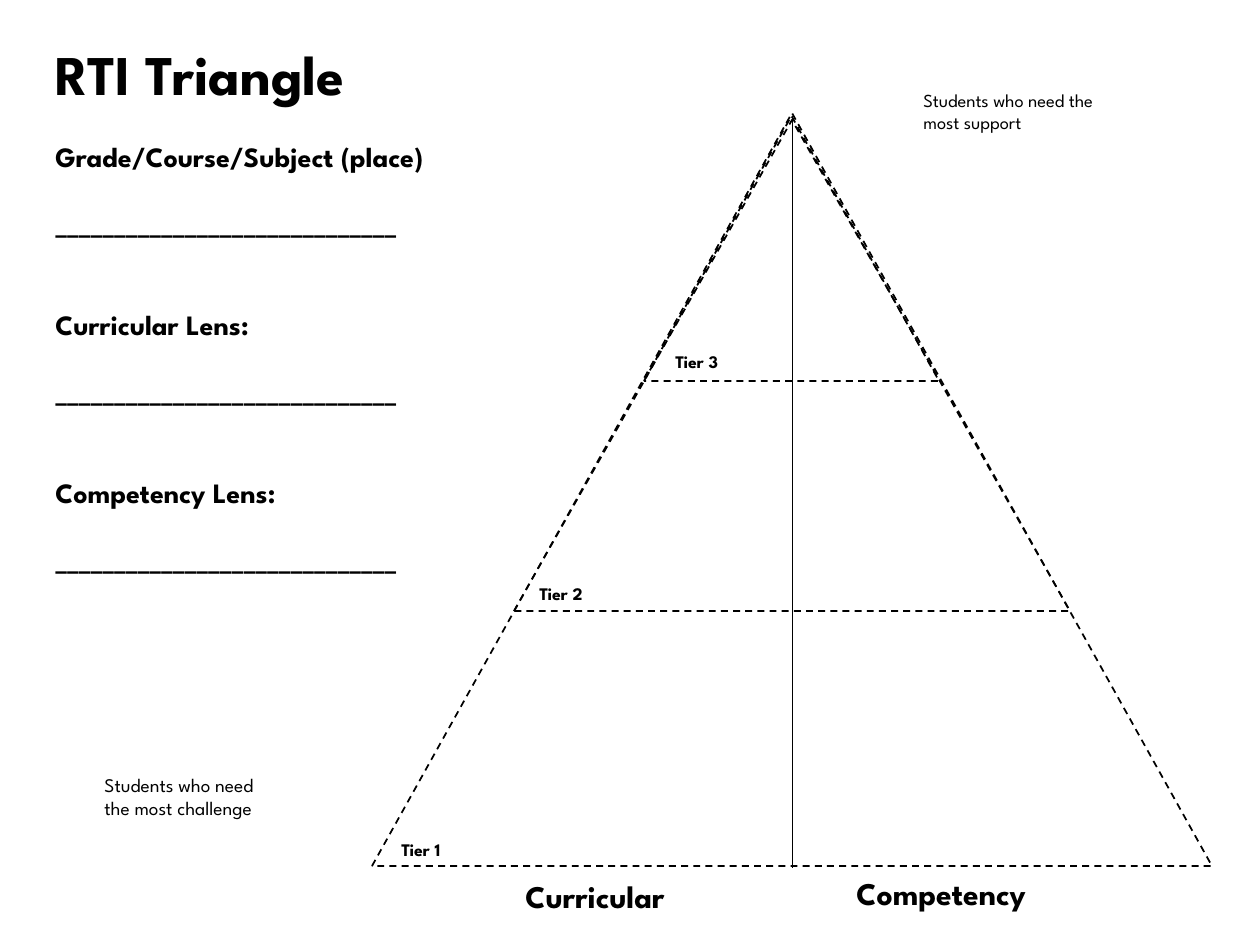
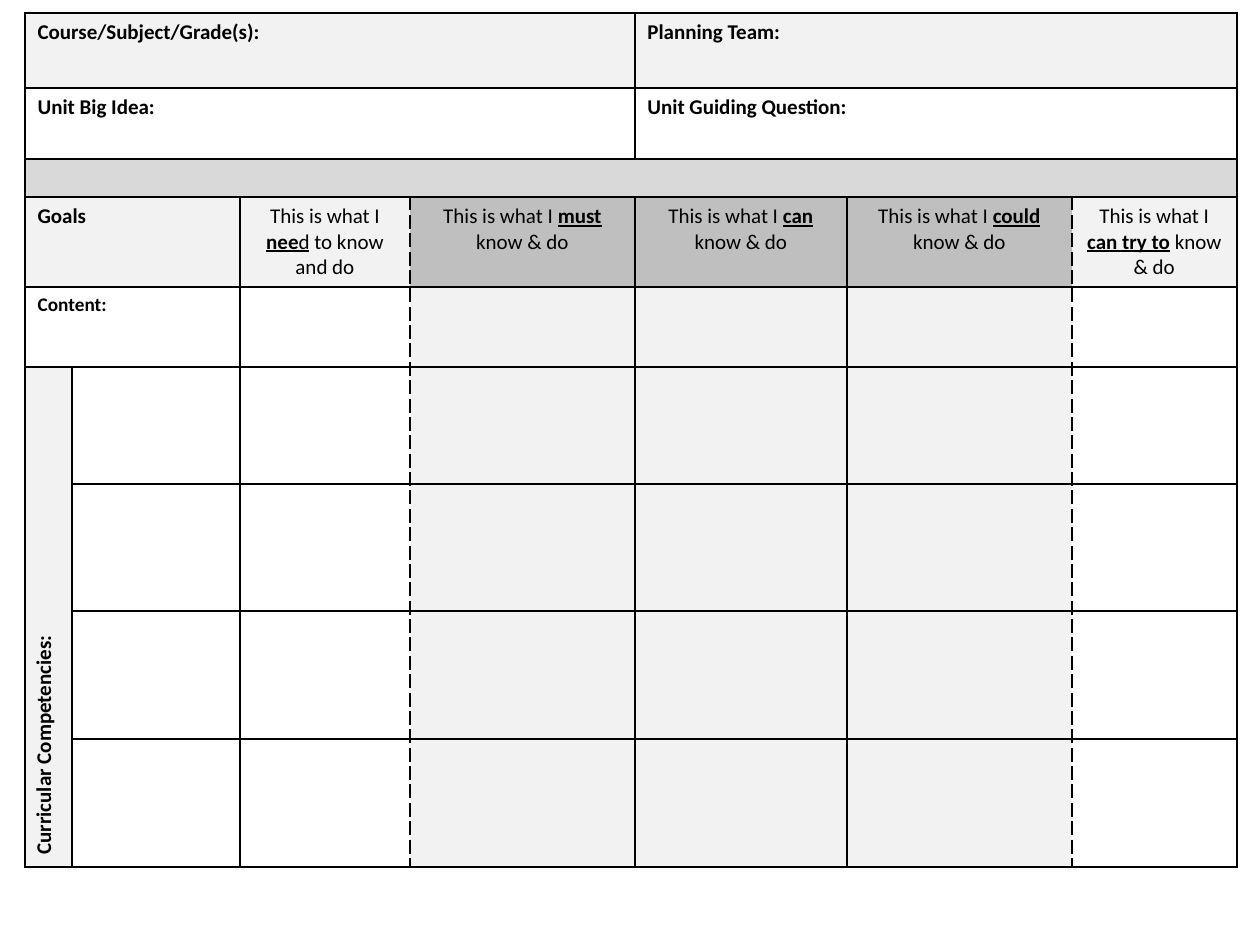
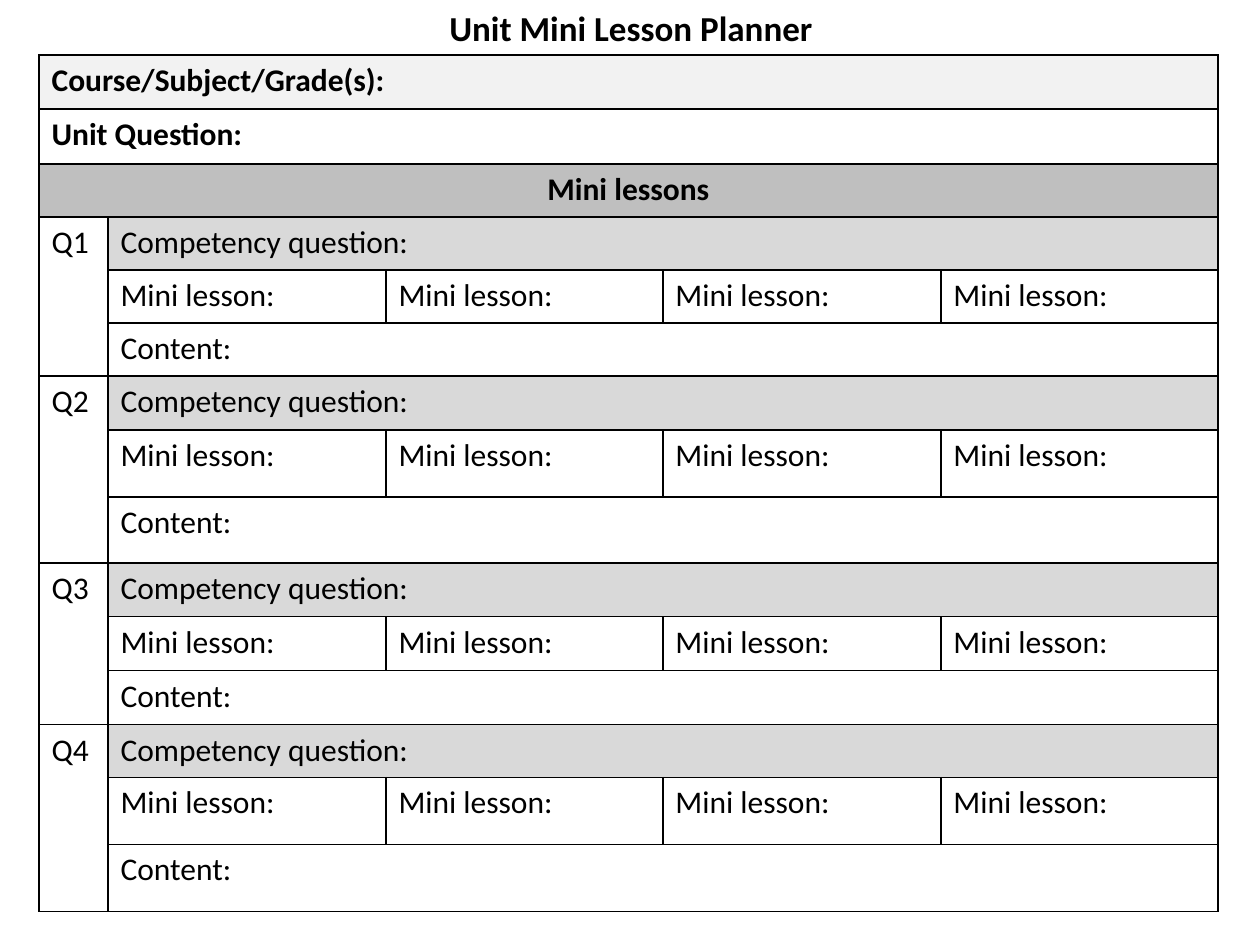
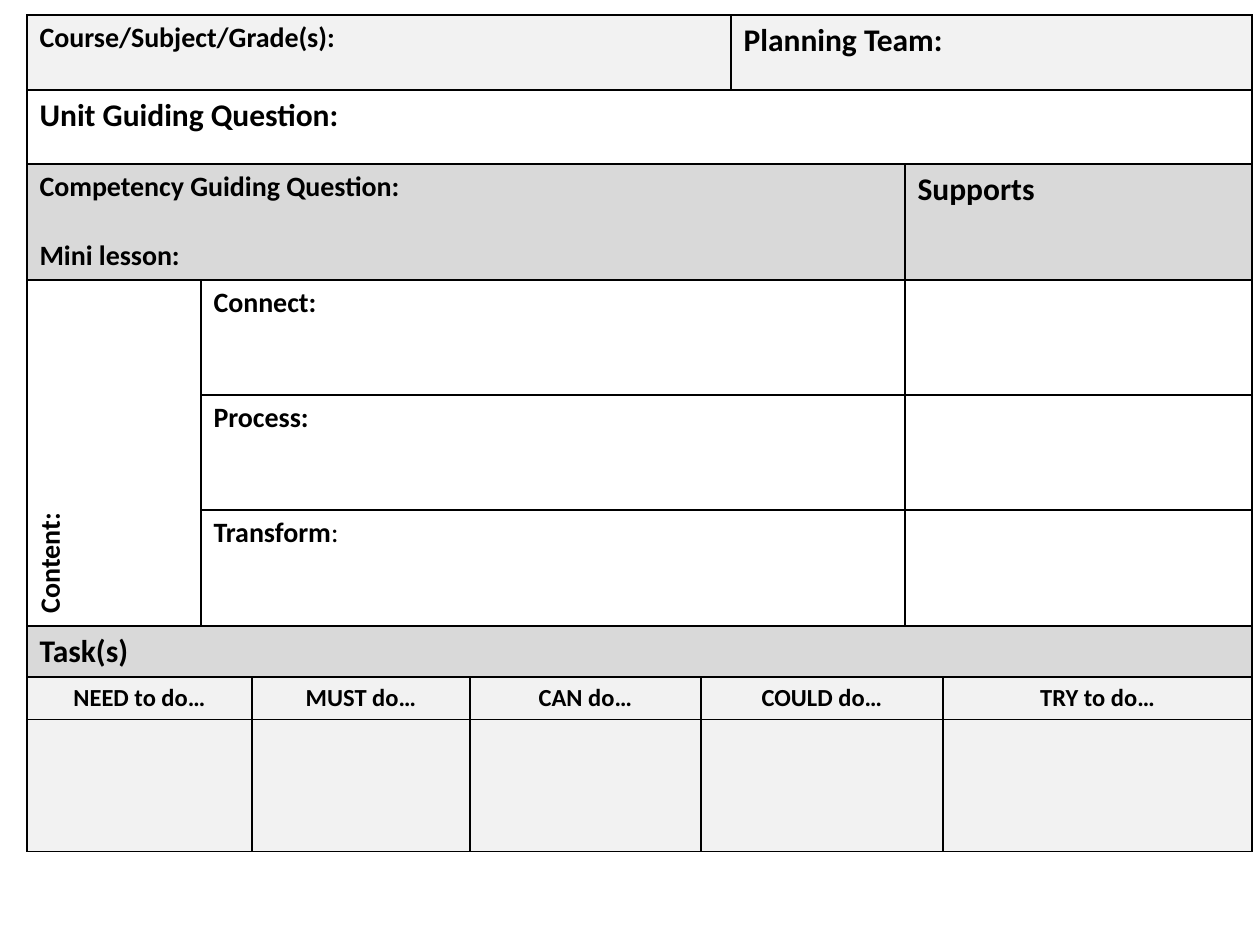
from lxml import etree
from pptx import Presentation
from pptx import util as u
from pptx.dml.color import RGBColor
from pptx.enum import dml, shapes, text
from pptx.oxml.ns import qn

PX = 914400 / 126
BLACK, WHITE = "000000", "FFFFFF"
PALE, LIGHT, MID = "F2F2F2", "D9D9D9", "BFBFBF"
SANS, HEAD = "Calibri", "League Spartan"
hue = RGBColor.from_string
MIDDLE = text.PP_ALIGN.CENTER


def write(frame, paras, size=12, bold=True, font=SANS, align=None, gaps=()):
    """Fill a frame; a paragraph is a string or a list of (text, marks), marks from b and u."""
    for i, para in enumerate(paras):
        p = frame.paragraphs[0] if i == 0 else frame.add_paragraph()
        p.alignment = align
        if gaps:
            p.space_before = u.Pt(gaps[i])
        for words, marks in [(para, "b" * bold)] if isinstance(para, str) else para:
            run = p.add_run()
            run.text = words
            run.font.name, run.font.size = font, u.Pt(size)
            run.font.bold, run.font.underline = "b" in marks, "u" in marks
            run.font.color.rgb = hue(BLACK)


def grid(slide, xs, ys, parts, dashed=(), top=0):
    """Draw a ruled table from its edges; parts are (row, col, rows, cols, fill, paras, format)."""
    frame = slide.shapes.add_table(
        len(ys) - 1, len(xs) - 1, *[round(n * PX) for n in (xs[0], ys[0], xs[-1] - xs[0], ys[-1] - ys[0])])
    tab = frame.table
    tab.first_row = tab.horz_banding = False
    for lines, edges, side in ((tab.columns, xs, "width"), (tab.rows, ys, "height")):
        for line, a, b in zip(lines, edges, edges[1:]):
            setattr(line, side, round((b - a) * PX))
    fills = {}
    for row, col, high, wide, fill, paras, form in parts:
        cell = tab.cell(row, col)
        if high * wide > 1:
            cell.merge(tab.cell(row + high - 1, col + wide - 1))
        fills.update({(r, c): fill for r in range(row, row + high) for c in range(col, col + wide)})
        write(cell.text_frame, paras, **form)
    for r in range(len(ys) - 1):
        for c in range(len(xs) - 1):
            cell = tab.cell(r, c)
            cell.fill.solid()
            cell.fill.fore_color.rgb = hue(fills.get((r, c), WHITE))
            if not cell.text_frame.text:
                cell.text_frame.paragraphs[0]._p.get_or_add_endParaRPr().set("sz", "1200")
            props = cell._tc.get_or_add_tcPr()
            for i, side in enumerate("LRTB"):
                line = etree.Element(qn("a:ln" + side), w="12700")
                ink = etree.SubElement(line, qn("a:solidFill"))
                etree.SubElement(ink, qn("a:srgbClr"), val=BLACK)
                edge = {"L": c, "R": c + 1}.get(side)
                dash = "lgDash" if edge in dashed and r >= top else "solid"
                etree.SubElement(line, qn("a:prstDash"), val=dash)
                props.insert(i, line)
    return tab


prs = Presentation()
prs.slide_width, prs.slide_height = u.Inches(10), u.Inches(7.5)
tri, goals, mini, plan = [prs.slides.add_slide(prs.slide_layouts[6]) for _ in range(4)]

# Slide 1: form fields and labels
RULE = "_" * 29
form = ["RTI Triangle", "Grade/Course/Subject (place)", RULE,
        "Curricular Lens:", RULE, "Competency Lens:", RULE]
box = tri.shapes.add_textbox(*[round(n * PX) for n in (43, 33, 616, 556)])
box.fill.solid()
box.fill.fore_color.rgb = hue(WHITE)
box.text_frame.word_wrap = True
write(box.text_frame, form, size=16, font=HEAD, gaps=(0, 19.2, 19.2, 38.4, 19.2, 38.4, 19.2))
box.text_frame.paragraphs[0].runs[0].font.size = u.Pt(32)

labels = [
    ("Tier 1", 389, 833, 78, 34, 10.1, True),
    ("Tier 2", 527, 577, 78, 34, 10.1, True),
    ("Tier 3", 663, 345, 78, 34, 10.1, True),
    ("Students who need the most support", 911, 83, 215, 57, 10.5, False),
    ("Students who need the most challenge", 92, 767, 184, 83, 11, False),
    ("Curricular", 513, 871, 184, 50, 18, True),
    ("Competency", 844, 868, 229, 50, 18, True),
]
for words, x, y, w, h, size, bold in labels:
    box = tri.shapes.add_textbox(*[round(n * PX) for n in (x, y, w, h)])
    box.text_frame.word_wrap = size < 18
    box.text_frame.auto_size = text.MSO_AUTO_SIZE.SHAPE_TO_FIT_TEXT
    write(box.text_frame, [words], size=size, bold=bold, font=HEAD)
    if words.startswith("Tier"):
        box.line.color.rgb = hue(WHITE)
        box.line.width = u.Pt(0.75)

# Nested triangles and the middle line
for spot in ((372, 113, 840, 753), (514, 120, 556, 491), (644, 116, 295, 265)):
    tier = tri.shapes.add_shape(shapes.MSO_SHAPE.ISOSCELES_TRIANGLE, *[round(n * PX) for n in spot])
    tier.shadow.inherit = False
    tier.fill.background()
    tier.line.color.rgb = hue(BLACK)
    tier.line.width = u.Pt(1)
    tier.line.dash_style = dml.MSO_LINE.DASH
split = tri.shapes.add_connector(
    shapes.MSO_CONNECTOR.STRAIGHT, *[round(n * PX) for n in (792, 116, 792, 868)])
split.line.color.rgb = hue(BLACK)
split.line.width = u.Pt(0.5)
etree.SubElement(split._element.spPr, qn("a:effectLst"))

# Slide 2: goals table
parts = [
    (0, 0, 1, 4, PALE, ["Course/Subject/Grade(s):"], {}),
    (0, 4, 1, 3, PALE, ["Planning Team:"], {}),
    (1, 0, 1, 4, WHITE, ["Unit Big Idea:"], {}),
    (1, 4, 1, 3, WHITE, ["Unit Guiding Question:"], {}),
    (2, 0, 1, 7, LIGHT, [], {}),
    (3, 0, 1, 2, PALE, ["Goals"], {}),
    (4, 0, 1, 2, WHITE, ["Content:"], {"size": 11}),
    (5, 0, 4, 1, PALE, ["Curricular Competencies:"], {}),
]
steps = [
    (PALE, [("nee", "bu"), ("d", "u"), (" to know and do", "")]),
    (MID, [("must ", "bu"), ("know & do", "")]),
    (MID, [("can", "bu"), (" know & do", "")]),
    (MID, [("could", "bu"), (" know & do", "")]),
    (PALE, [("can try to", "bu"), (" know & do", "")]),
]
for c, (fill, runs) in enumerate(steps, 2):
    parts.append((3, c, 1, 1, fill, [[("This is what I ", "")] + runs], {"align": MIDDLE}))
parts += [(r, c, 1, 1, PALE, [], {}) for r in range(4, 9) for c in (3, 4, 5)]
tab = grid(goals, (25, 72, 240, 410, 635, 847, 1072, 1237),
           (13, 88, 159, 197, 287, 367, 484, 611, 739, 867), parts, dashed=(3, 6), top=3)
side = tab.cell(5, 0)
side.vertical_anchor = text.MSO_ANCHOR.MIDDLE
side._tc.get_or_add_tcPr().set("vert", "vert270")

# Slide 3: mini lesson planner
big = {"size": 18}
plain = {"size": 18, "bold": False}
parts = [
    (0, 0, 1, 5, PALE, ["Course/Subject/Grade(s):"], big),
    (1, 0, 1, 5, WHITE, ["Unit Question:"], big),
    (2, 0, 1, 5, MID, ["Mini lessons"], {"size": 18, "align": MIDDLE}),
]
for q in range(4):
    r = 3 + 3 * q
    parts += [
        (r, 0, 3, 1, WHITE, [f"Q{q + 1}"], plain),
        (r, 1, 1, 4, LIGHT, ["Competency question:"], plain),
        (r + 2, 1, 1, 4, WHITE, ["Content:"], plain),
    ]
    parts += [(r + 1, c, 1, 1, WHITE, ["Mini lesson:"], plain) for c in range(1, 5)]
grid(mini, (39, 108, 386, 663, 941, 1218),
     (55, 109, 164, 217, 270, 323, 376, 430, 497, 563, 617, 671, 725, 778, 845, 912), parts)
box = mini.shapes.add_textbox(*[round(n * PX) for n in (437, 0, 392, 55)])
box.text_frame.word_wrap = False
box.text_frame.auto_size = text.MSO_AUTO_SIZE.SHAPE_TO_FIT_TEXT
write(box.text_frame, ["Unit Mini Lesson Planner"], size=20)

# Slide 4: lesson plan
norm = {"size": 16}
parts = [
    (0, 0, 1, 5, PALE, ["Course/Subject/Grade(s):"], norm),
    (0, 5, 1, 3, PALE, ["Planning Team:"], big),
    (1, 0, 1, 8, WHITE, ["Unit Guiding Question:"], big),
    (2, 0, 1, 6, LIGHT, ["Competency Guiding Question:", "Mini lesson:"], {"size": 16, "gaps": (0, 19.5)}),
    (2, 6, 1, 2, LIGHT, ["Supports"], big),
    (3, 0, 3, 1, WHITE, ["Content:"], norm),
    (6, 0, 1, 8, LIGHT, ["Task(s)"], big),
]
for r, words in enumerate(("Connect:", "Process:", [("Transform", "b"), (":", "")]), 3):
    parts += [(r, 1, 1, 5, WHITE, [words], norm), (r, 6, 1, 2, WHITE, [], {})]
tasks = (("NEED", 0, 2), ("MUST", 2, 1), ("CAN", 3, 1), ("COULD", 4, 3), ("TRY", 7, 1))
for verb, c, wide in tasks:
    tail = " to do…" if verb in ("NEED", "TRY") else " do…"
    parts += [(7, c, 1, wide, PALE, [verb + tail], {"size": 14, "align": MIDDLE}),
              (8, c, 1, wide, PALE, [], {})]
tab = grid(plan, (27, 201, 252, 470, 701, 731, 905, 943, 1252),
           (15, 90, 164, 280, 395, 510, 626, 677, 719, 851), parts)
tab.cell(3, 0)._tc.get_or_add_tcPr().set("vert", "vert270")

prs.save("out.pptx")
